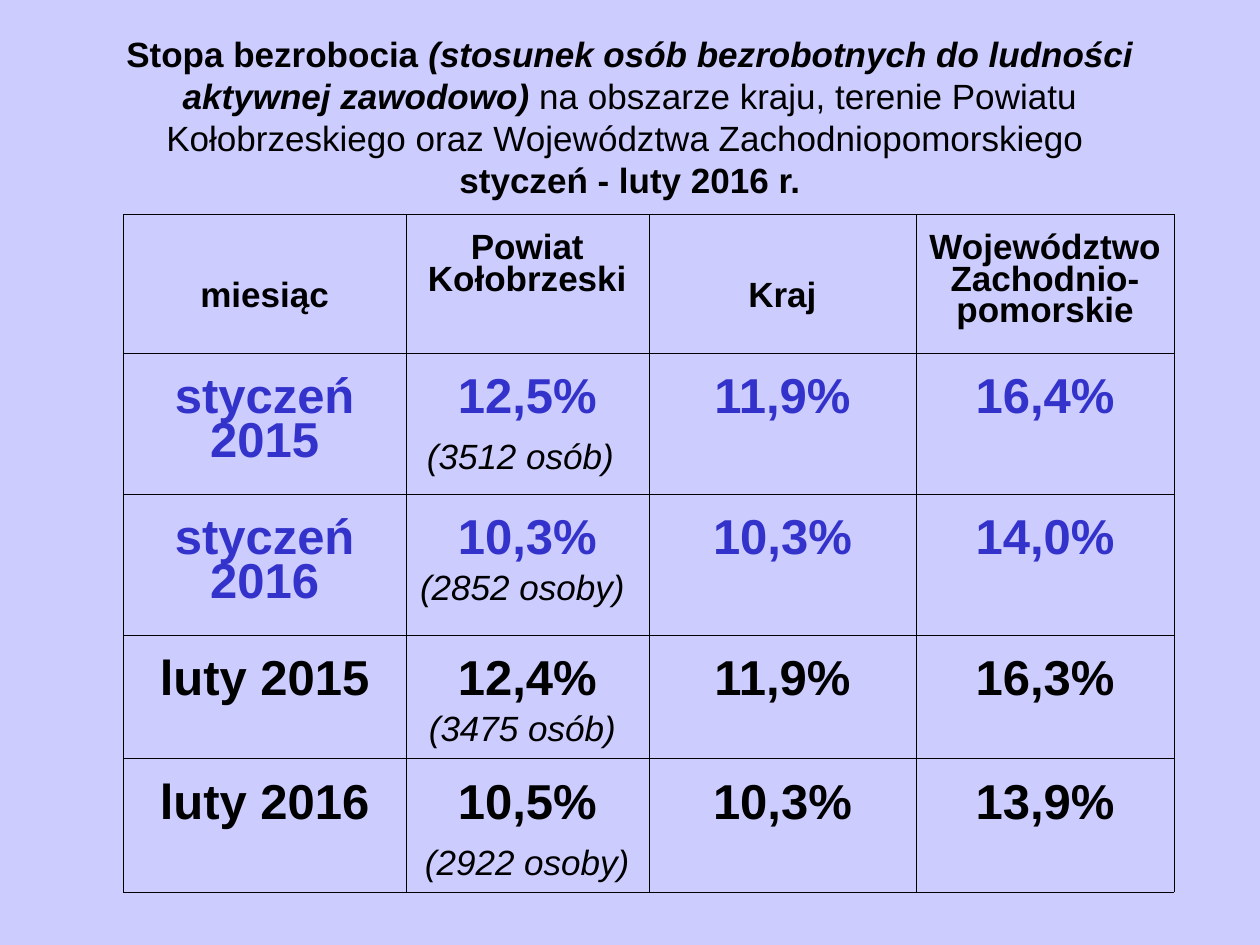
from dataclasses import dataclass

from lxml import etree
from pptx import Presentation
from pptx.dml.color import RGBColor
from pptx.enum import text as t
from pptx.oxml.ns import qn
from pptx.util import Inches, Pt

BLACK, BLUE, LAVENDER = "000000", "3333CC", "CCCCFF"
COLUMN_WIDTHS = (2.24, 1.93, 2.12, 2.05)
ROW_HEIGHTS = (1.1, 1.12, 1.12, 0.98, 1.06)
INNER_LINE, OUTER_LINE = 0.11, 0.23


@dataclass
class Run:
    text: str
    size: float = 20
    color: str = BLACK
    bold: bool = False
    italic: bool = False


@dataclass
class Month:
    name: str
    county: str
    people: list[Run]
    country: str
    region: str
    color: str


HEADERS = ("miesiąc", "Powiat Kołobrzeski", "Kraj", "Województwo Zachodnio-pomorskie")
# One-line headings sit lower in the header row
HEADER_TOPS = (0.54, 0.16, 0.54, 0.16)
WIDE_SPACE = Run(" ", 28)
MONTHS = (
    Month("styczeń 2015", "12,5%", [Run("(3512 osób)", italic=True), WIDE_SPACE],
          "11,9%", "16,4%", BLUE),
    Month("styczeń 2016", "10,3%", [Run("(2852 osoby) ", italic=True)],
          "10,3%", "14,0%", BLUE),
    Month("luty 2015", "12,4%", [Run("(3475 osób) ", italic=True)],
          "11,9%", "16,3%", BLACK),
    Month("luty 2016", "10,5%", [Run("(2922 osoby)", italic=True), WIDE_SPACE],
          "10,3%", "13,9%", BLACK),
)


def rgb(value: str) -> RGBColor:
    return RGBColor.from_string(value)


def add_run(paragraph, item: Run) -> None:
    run = paragraph.add_run()
    run.text = item.text
    font = run.font
    font.name, font.size = "Arial", Pt(item.size)
    font.bold, font.italic = item.bold, item.italic
    font.color.rgb = rgb(item.color)


def set_borders(cell, widths: dict[str, float]) -> None:
    properties = cell._tc.get_or_add_tcPr()
    for index, (side, width) in enumerate(widths.items()):
        line = etree.Element(qn(f"a:ln{side}"), w=str(Pt(width)))
        fill = etree.SubElement(line, qn("a:solidFill"))
        etree.SubElement(fill, qn("a:srgbClr"), val=BLACK)
        properties.insert(index, line)


def fill_cell(cell, lines: list[list[Run]], top: float, space: float) -> None:
    cell.fill.background()
    cell.margin_left = cell.margin_right = Inches(0.1)
    cell.margin_top, cell.margin_bottom = Inches(top), Inches(0.05)
    frame = cell.text_frame
    for index, runs in enumerate(lines):
        paragraph = frame.add_paragraph() if index else frame.paragraphs[0]
        paragraph.alignment = t.PP_ALIGN.CENTER
        paragraph.line_spacing = 0.81
        paragraph.space_before = Pt(space)
        for run in runs:
            add_run(paragraph, run)


def add_title(slide) -> None:
    title = slide.shapes.title
    title.left, title.top = Inches(0.5), Inches(0.3)
    title.width, title.height = Inches(9), Inches(1.25)
    frame = title.text_frame
    frame.word_wrap = True
    frame.auto_size = t.MSO_AUTO_SIZE.NONE
    frame.vertical_anchor = t.MSO_ANCHOR.MIDDLE
    paragraph = frame.paragraphs[0]
    paragraph.alignment = t.PP_ALIGN.CENTER
    add_run(paragraph, Run("Stopa bezrobocia ", bold=True))
    add_run(paragraph, Run("(stosunek osób bezrobotnych do ludności aktywnej zawodowo)",
                           bold=True, italic=True))
    add_run(paragraph, Run(" na obszarze kraju, terenie Powiatu Kołobrzeskiego "
                           "oraz Województwa Zachodniopomorskiego "))
    paragraph.add_line_break()
    add_run(paragraph, Run("styczeń - luty 2016 r.", bold=True))


def add_rates_table(slide) -> None:
    rows, columns = len(ROW_HEIGHTS), len(COLUMN_WIDTHS)
    table = slide.shapes.add_table(
        rows, columns, Inches(0.98), Inches(1.7),
        Inches(sum(COLUMN_WIDTHS)), Inches(sum(ROW_HEIGHTS))).table
    table.first_row = table.horz_banding = False
    for column, width in zip(table.columns, COLUMN_WIDTHS):
        column.width = Inches(width)
    for row, height in zip(table.rows, ROW_HEIGHTS):
        row.height = Inches(height)

    # Header row
    for column, (header, top) in enumerate(zip(HEADERS, HEADER_TOPS)):
        fill_cell(table.cell(0, column), [[Run(header, bold=True)]], top, 5)

    # One row per month, with the head count under the county rate
    for row, month in enumerate(MONTHS, 1):
        values = (month.name, month.county, month.country, month.region)
        for column, value in enumerate(values):
            lines = [[Run(value, 28, month.color, bold=True)]]
            if column == 1:
                lines.append(month.people)
            fill_cell(table.cell(row, column), lines, 0.2, 7)

    # Thin grid with a heavier frame
    for row in range(rows):
        for column in range(columns):
            outer = {"L": column == 0, "R": column == columns - 1,
                     "T": row == 0, "B": row == rows - 1}
            set_borders(table.cell(row, column),
                        {side: OUTER_LINE if edge else INNER_LINE
                         for side, edge in outer.items()})


def main() -> None:
    presentation = Presentation()
    presentation.slide_width, presentation.slide_height = Inches(10), Inches(7.5)
    slide = presentation.slides.add_slide(presentation.slide_layouts[5])
    background = slide.background.fill
    background.solid()
    background.fore_color.rgb = rgb(LAVENDER)
    add_title(slide)
    add_rates_table(slide)
    presentation.save("out.pptx")


if __name__ == "__main__":
    main()
